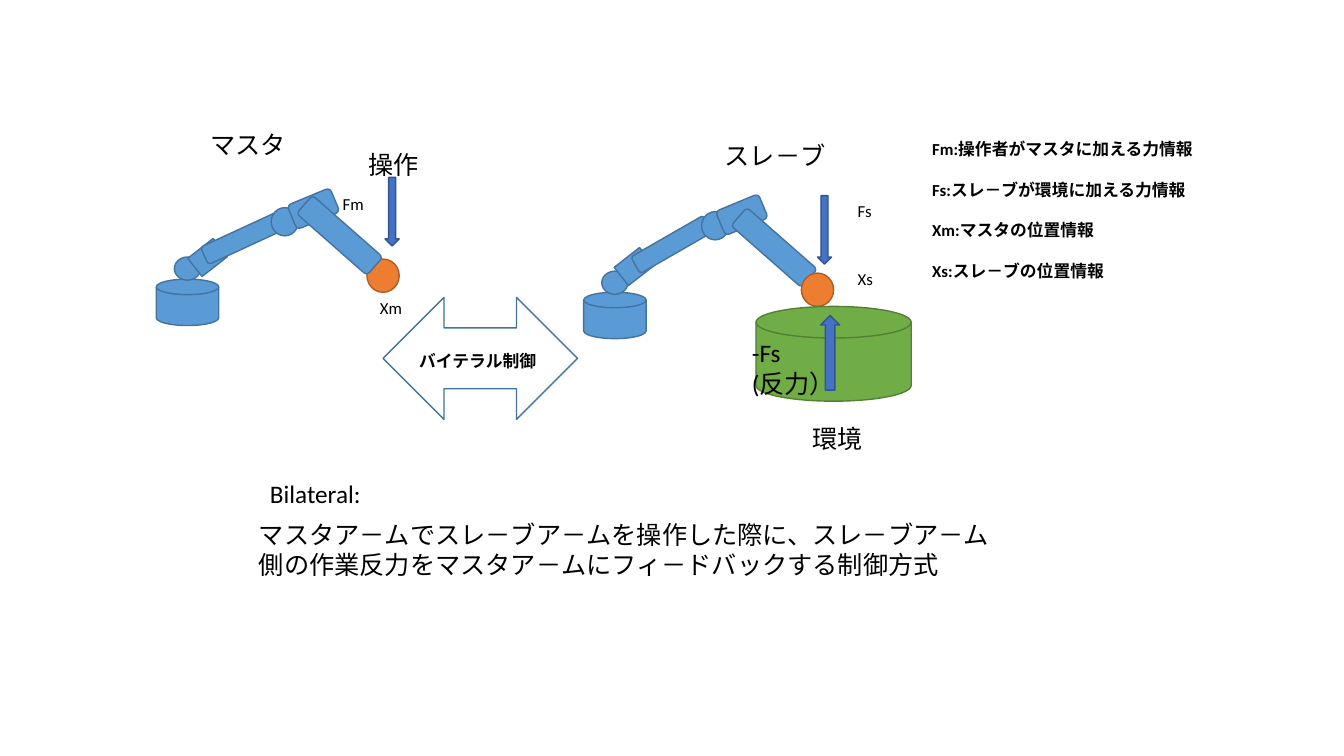
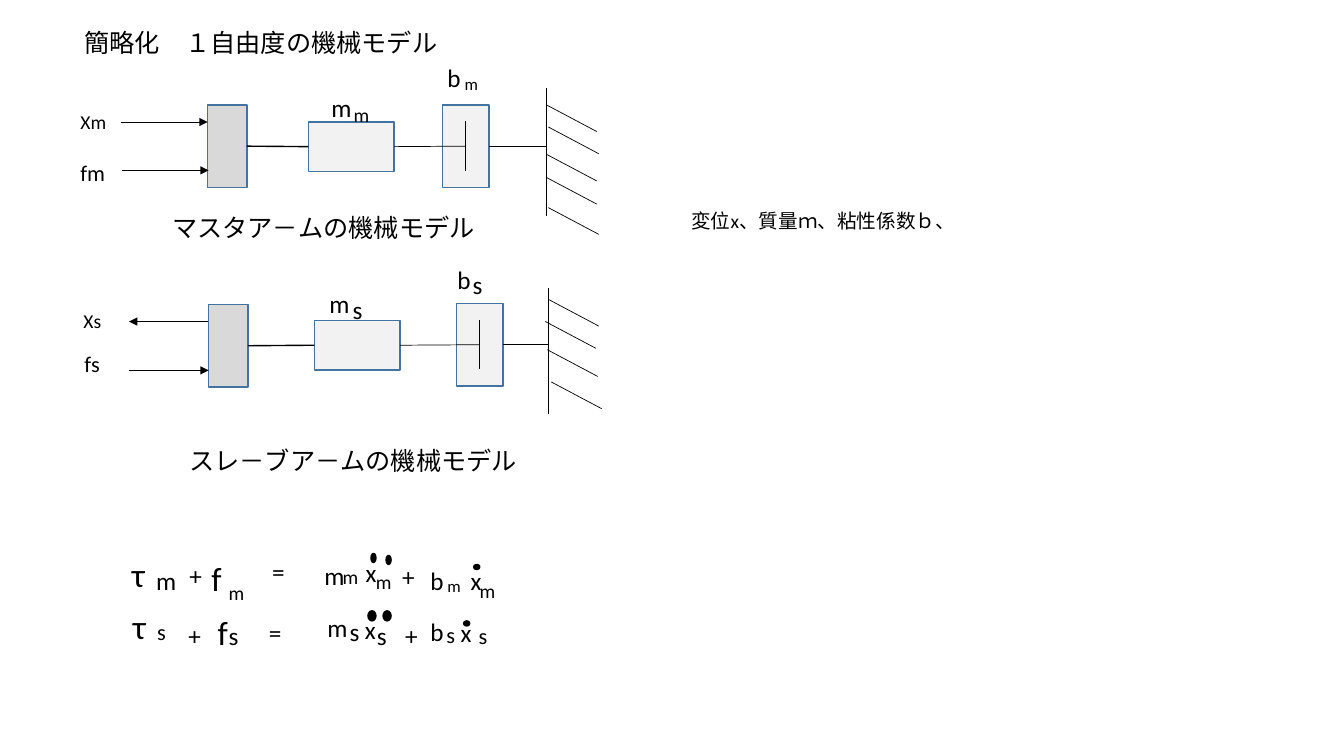
"""Builds two slides on bilateral control: the robot arms and their mechanical models."""
from dataclasses import dataclass

from lxml.etree import SubElement
from pptx import Presentation
from pptx.dml.color import RGBColor
from pptx.enum.shapes import MSO_CONNECTOR, MSO_SHAPE as Kind
from pptx.enum.text import MSO_AUTO_SIZE as AutoSize
from pptx.oxml.ns import qn
from pptx.util import Inches, Pt


@dataclass(frozen=True)
class Theme:
    """Holds the colours, type sizes, line weights and grid of the deck."""
    font: str = "Calibri"
    ink: str = "000000"
    edge: str = "43739E"
    arm: tuple = ("5B9BD5", "43739E")
    grip: tuple = ("ED7D31", "AF5C24")
    ground: tuple = ("70AD47", "538035")
    force: tuple = ("4472C4", "325491")
    plate: tuple = ("D9D9D9", "43739E")
    block: tuple = ("F2F2F2", "43739E")
    dot: tuple = ("000000", "000000")
    symbol: int = 24
    body: int = 18
    index: int = 16
    small: int = 14
    note: int = 12
    bold_line: float = 1
    thin_line: float = 0.5
    columns: float = 133.33
    rows: float = 75


THEME = Theme()
LEFT, RIGHT = 1, 3

ARM_PARTS = {
    "base": (Kind.FLOWCHART_MAGNETIC_DISK, 6.2, 4.6, THEME.arm),
    "shoulder": (Kind.OVAL, 2.6, 2.3, THEME.arm),
    "neck": (Kind.RECTANGLE, 3.2, 2.3, THEME.arm),
    "upper arm": (Kind.ROUNDED_RECTANGLE, 8.3, 1.9, THEME.arm),
    "elbow": (Kind.OVAL, 2.7, 2.8, THEME.arm),
    "bracket": (Kind.ROUNDED_RECTANGLE, 4.6, 2.6, THEME.arm),
    "forearm": (Kind.ROUNDED_RECTANGLE, 2.4, 9.3, THEME.arm),
    "grip": (Kind.OVAL, 3.2, 3.3, THEME.grip),
}
MASTER_ARM = {
    "base": (15.5, 27.7, 0), "shoulder": (17.3, 25.5, 0),
    "neck": (19, 24.4, 322), "upper arm": (19.9, 22.7, 335.2),
    "elbow": (26.9, 20.6, 0), "bracket": (28.8, 19.4, 337.5),
    "grip": (36.4, 25.7, 0), "forearm": (32.5, 18.7, 311.3),
}
SLAVE_ARM = {
    "base": (57.9, 29, 0), "shoulder": (59.7, 26.9, 0),
    "neck": (61.3, 25.3, 322), "upper arm": (62.5, 23.3, 330.1),
    "elbow": (69.6, 21, 0), "bracket": (71.3, 20, 337.5),
    "forearm": (75.6, 19.9, 311.3), "grip": (79.5, 27.1, 0),
}
ARM_LABELS = [
    ("Fs", 84.1, 19.4, 5, THEME.note), ("Xs", 84.1, 26.2, 6.3, THEME.note),
    ("-Fs\n(反力）", 73.6, 33, 12.2, THEME.body),
    ("環境", 79.6, 41.5, 14.3, THEME.body), ("操作", 35.6, 14.3, 8.4, THEME.body),
    ("Fm", 33, 18.7, 7.5, THEME.note), ("Xm", 36.7, 29, 8.2, THEME.note),
    ("マスタ", 19.9, 12.3, 9.7, THEME.body),
    ("スレ－ブ", 70.9, 13.4, 13.1, THEME.body),
    ("マスタア－ムでスレ－ブア－ムを操作した際に、スレ－ブア－ム側の作業反力を"
     "マスタア－ムにフィ－ドバックする制御方式", 24.7, 51, 75, THEME.body),
    ("Bilateral:", 25.8, 47, 13.1, THEME.body),
]
LEGEND = ("Fm:操作者がマスタに加える力情報\nFs:スレ－ブが環境に加える力情報\n"
          "Xm:マスタの位置情報\nXs:スレ－ブの位置情報")


@dataclass(frozen=True)
class Model:
    """Places one mass and damper model on the grid."""
    plate: tuple
    mass: tuple
    damper: tuple
    wall: tuple
    hatches: tuple
    arrows: tuple


MASTER_MODEL = Model(
    plate=(20.6, 10.4), mass=(30.6, 12.1), damper=(43.9, 10.4),
    wall=(54.2, 8.7, 21.4),
    hatches=((54.2, 10.4), (54.4, 12.6), (54.2, 15.3), (54.2, 17.6), (54.4, 20.6)),
    arrows=((12, 20.6, 12.1), (12.1, 20.7, 16.9)))
SLAVE_MODEL = Model(
    plate=(20.7, 30.2), mass=(31.2, 31.8), damper=(45.3, 30.1),
    wall=(54.4, 28.6, 41.1),
    hatches=((54.4, 29.7), (54.1, 31.9), (54.3, 34.7), (54.7, 37.9)),
    arrows=((20.6, 12.8, 31.9), (12.8, 20.7, 36.75)))
MODEL_LABELS = [
    ("簡略化　１自由度の機械モデル", 7.4, 2.2, 46.7, THEME.body),
    ("Xm", 7, 10.4, 7.1, THEME.small), ("fm", 7, 15.3, 8.7, THEME.index),
    ("m", 31.9, 8.7, 7.2, THEME.body), ("m", 34.1, 9.7, 2.7, THEME.small),
    ("b", 43.4, 5.7, 6.2, THEME.body), ("m", 45.1, 6.8, 4.8, THEME.note),
    ("マスタア－ムの機械モデル", 16.1, 20.6, 34.5, THEME.body),
    ("Xs", 7.3, 30.2, 7.1, THEME.small), ("fs", 7.4, 34.2, 8.7, THEME.index),
    ("m", 31.7, 28.1, 7.2, THEME.body), ("s", 34, 28.7, 5.9, THEME.body),
    ("b", 44.4, 25.7, 6.2, THEME.body), ("s", 45.9, 26.2, 3, THEME.body),
    ("スレ－ブア－ムの機械モデル", 17.8, 43.7, 36.3, THEME.body),
    ("変位x、質量ｍ、粘性係数ｂ、", 67.6, 20.2, 30.2, THEME.small),
]
MASTER_EQUATION = [
    ("τ", 12.1, 54.5, 2.4, THEME.symbol), ("m", 14.5, 55.6, 5.4, THEME.body),
    ("+", 17.8, 55.1, 23.3, THEME.body), ("f", 20, 54.9, 13.3, THEME.symbol),
    ("m", 21.7, 57.1, 5.9, THEME.small), ("=", 26, 54.7, 35.5, THEME.body),
    ("m", 31.2, 55.1, 30.5, THEME.body), ("m", 33, 55.6, 6.7, THEME.small),
    ("x", 35.3, 54.8, 11, THEME.body), ("m", 36.3, 56, 6.7, THEME.small),
    ("+", 38.9, 55.2, 21.5, THEME.body), ("b", 41.7, 55.6, 4.8, THEME.body),
    ("m", 43.4, 56.6, 3.4, THEME.note), ("x", 45.7, 55.6, 6.8, THEME.body),
    ("m", 46.6, 56.9, 6.7, THEME.small),
]
SLAVE_EQUATION = [
    ("τ", 12.2, 59.6, 2.4, THEME.symbol), ("s", 14.6, 60.8, 4, THEME.index),
    ("+", 17.7, 61, 23.3, THEME.body), ("f", 20.6, 60.2, 13.3, THEME.symbol),
    ("s", 21.7, 61.1, 3.5, THEME.body), ("=", 25.7, 60.8, 35.5, THEME.body),
    ("m", 31.5, 60.3, 6.5, THEME.body), ("s", 33.7, 60.7, 2.3, THEME.body),
    ("x", 35.2, 60.5, 4.9, THEME.body), ("s", 36.4, 61.1, 3.5, THEME.body),
    ("+", 39.2, 61.1, 14.6, THEME.body), ("b", 41.7, 60.7, 9.5, THEME.body),
    ("s", 43.3, 61.1, 2.6, THEME.index), ("x", 44.7, 60.8, 10.8, THEME.body),
    ("s", 46.5, 61.2, 4.7, THEME.index),
]
DERIVATIVE_DOTS = [
    (36.8, 54.9, 0.5, 0.9), (38.3, 55.1, 0.5, 0.9), (47, 56, 0.6, 0.5),
    (36.5, 60.6, 0.8, 1), (38, 60.6, 0.8, 1), (46, 61.6, 0.6, 0.5),
]


def grid(steps):
    """Turns columns or rows into a length."""
    return Inches(steps / 10)


def colour(code):
    """Reads a colour code."""
    return RGBColor.from_string(code)


def add_figure(page, kind, left, top, width, height, paint, turn=0):
    """Draws a preset shape with a (fill, line) paint."""
    figure = page.shapes.add_shape(kind, *map(grid, (left, top, width, height)))
    figure.shadow.inherit = False
    figure.rotation = turn
    fill, edge = paint
    if fill:
        figure.fill.solid()
        figure.fill.fore_color.rgb = colour(fill)
    else:
        figure.fill.background()
    figure.line.color.rgb = colour(edge)
    figure.line.width = Pt(THEME.bold_line)
    return figure


def add_label(page, text, left, top, width, size, bold=False, gap=0):
    """Writes a text box, one paragraph for each line of text."""
    lines = text.split("\n")
    height = 1 + len(lines) * size / 6
    box = page.shapes.add_textbox(*map(grid, (left, top, width, height)))
    frame = box.text_frame
    frame.word_wrap = True
    frame.auto_size = AutoSize.SHAPE_TO_FIT_TEXT
    frame.text = text
    for position, para in enumerate(frame.paragraphs):
        para.font.name = THEME.font
        para.font.size = Pt(size)
        para.font.bold = bold
        para.font.color.rgb = colour(THEME.ink)
        if position:
            para.space_before = Pt(gap)


def add_line(page, start, end, weight=THEME.thin_line, arrow=False):
    """Draws a straight line, with an arrowhead at its end if asked."""
    line = page.shapes.add_connector(
        MSO_CONNECTOR.STRAIGHT, *map(grid, (*start, *end)))
    line.line.color.rgb = colour(THEME.ink)
    line.line.width = Pt(weight)
    outline = line.element.spPr
    if arrow:
        SubElement(outline.find(qn("a:ln")), qn("a:tailEnd"), type="triangle")
    SubElement(outline, qn("a:effectLst"))
    return line


def add_arm(page, places):
    """Draws a robot arm from the places of its parts."""
    for name, (left, top, turn) in places.items():
        kind, width, height, paint = ARM_PARTS[name]
        add_figure(page, kind, left, top, width, height, paint, turn)


def add_model(page, model):
    """Draws plate, mass, damper and wall, with the rods and arrows between them."""
    plate = add_figure(page, Kind.RECTANGLE, *model.plate, 3.9, 8.2, THEME.plate)
    mass = add_figure(page, Kind.RECTANGLE, *model.mass, 8.5, 4.9, THEME.block)
    damper = add_figure(page, Kind.RECTANGLE, *model.damper, 4.6, 8.2, THEME.block)
    piston = model.damper[0] + 2.3
    axis = model.damper[1] + 4.1
    wall, wall_top, wall_bottom = model.wall

    rod = add_line(page, model.plate, model.mass, THEME.bold_line)
    rod.begin_connect(plate, RIGHT)
    rod.end_connect(mass, LEFT)
    add_line(page, model.mass, (piston, axis)).begin_connect(mass, RIGHT)
    add_line(page, (piston, axis - 2.45), (piston, axis + 2.45))
    add_line(page, model.damper, (wall, axis)).begin_connect(damper, RIGHT)
    add_line(page, (wall, wall_top), (wall, wall_bottom))
    for left, top in model.hatches:
        add_line(page, (left, top), (left + 5, top + 2.65))
    for start, end, height in model.arrows:
        add_line(page, (start, height), (end, height), arrow=True)


def build_arms(page):
    """Fills the slide on bilateral control."""
    add_arm(page, MASTER_ARM)
    add_arm(page, SLAVE_ARM)
    add_figure(page, Kind.FLOWCHART_MAGNETIC_DISK, 75, 30.4, 15.4, 9.4, THEME.ground)
    add_figure(page, Kind.DOWN_ARROW, 81.1, 19.4, 1.4, 6.8, THEME.force)
    add_figure(page, Kind.UP_ARROW, 81.4, 31.3, 1.9, 7.4, THEME.force)
    add_figure(page, Kind.DOWN_ARROW, 38.2, 17.6, 1.4, 6.8, THEME.force)
    add_figure(page, Kind.LEFT_RIGHT_ARROW, 38, 29.5, 19.3, 12.1, (None, THEME.edge))
    for label in ARM_LABELS:
        add_label(page, *label)
    add_label(page, "バイテラル制御", 40.6, 34.3, 21.7, THEME.note, bold=True)
    add_label(page, LEGEND, 91.5, 13.3, 29.3, THEME.note, bold=True, gap=14.5)


def build_models(page):
    """Fills the slide on the mechanical models."""
    add_model(page, MASTER_MODEL)
    add_model(page, SLAVE_MODEL)
    for label in MODEL_LABELS + MASTER_EQUATION + SLAVE_EQUATION:
        add_label(page, *label)
    for dot in DERIVATIVE_DOTS:
        add_figure(page, Kind.OVAL, *dot, THEME.dot)


def main():
    """Makes and saves the deck."""
    deck = Presentation()
    deck.slide_width, deck.slide_height = grid(THEME.columns), grid(THEME.rows)
    blank = deck.slide_layouts[6]
    for build in (build_arms, build_models):
        build(deck.slides.add_slide(blank))
    deck.save("out.pptx")


if __name__ == "__main__":
    main()
